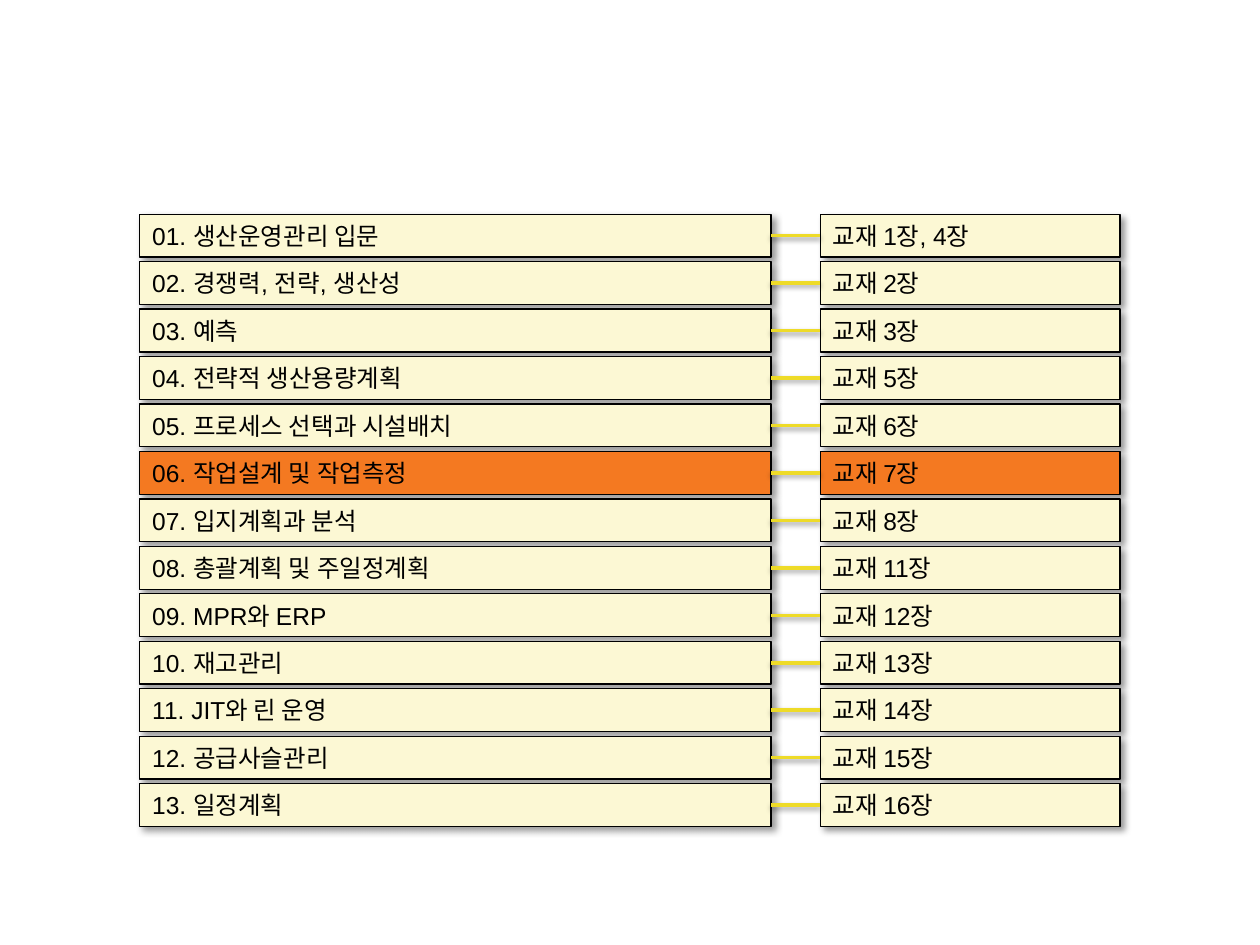
"""Build a course outline slide that links each lecture to its textbook chapters."""
import pptx
import pptx.dml.color
import pptx.enum.shapes
import pptx.enum.text
import pptx.oxml
import pptx.oxml.ns
import pptx.util

Inches = pptx.util.Inches
RGBColor = pptx.dml.color.RGBColor

ROWS = [
    ("01. 생산운영관리 입문", "교재 1장, 4장"),
    ("02. 경쟁력, 전략, 생산성", "교재 2장"),
    ("03. 예측", "교재 3장"),
    ("04. 전략적 생산용량계획", "교재 5장"),
    ("05. 프로세스 선택과 시설배치", "교재 6장"),
    ("06. 작업설계 및 작업측정", "교재 7장"),
    ("07. 입지계획과 분석", "교재 8장"),
    ("08. 총괄계획 및 주일정계획", "교재 11장"),
    ("09. MPR와 ERP", "교재 12장"),
    ("10. 재고관리", "교재 13장"),
    ("11. JIT와 린 운영", "교재 14장"),
    ("12. 공급사슬관리", "교재 15장"),
    ("13. 일정계획", "교재 16장"),
]
ACTIVE = 5
COLUMNS = [(1.11, 5.01), (6.51, 2.38)]
TOP, BOTTOM, HEIGHT = 1.7, 6.22, 0.34
STEP = (BOTTOM - TOP) / (len(ROWS) - 1)

BLACK = RGBColor(0x00, 0x00, 0x00)
CREAM = RGBColor(0xFC, 0xF8, 0xD4)
ORANGE = RGBColor(0xF4, 0x79, 0x21)
YELLOW = RGBColor(0xEE, 0xDB, 0x28)


def shade(shape, blur, dist, angle, alpha):
    """Give a shape or connector a soft black outer shadow."""
    effect = pptx.oxml.parse_xml(
        f'<a:effectLst {pptx.oxml.ns.nsdecls("a")}>'
        f'<a:outerShdw blurRad="{pptx.util.Pt(blur)}" dist="{pptx.util.Pt(dist)}" '
        f'dir="{angle * 60000}" algn="tl" rotWithShape="0">'
        f'<a:srgbClr val="{BLACK}"><a:alpha val="{alpha * 1000}"/></a:srgbClr>'
        '</a:outerShdw></a:effectLst>'
    )
    shape._element.spPr.append(effect)


def write(shape, text, size=14, font="Arial", color=BLACK,
          align=pptx.enum.text.PP_ALIGN.LEFT):
    """Put formatted text into a shape."""
    frame = shape.text_frame
    frame.word_wrap = True
    frame.auto_size = pptx.enum.text.MSO_AUTO_SIZE.SHAPE_TO_FIT_TEXT
    para = frame.paragraphs[0]
    para.alignment = align
    run = para.add_run()
    run.text = text
    run.font.size = pptx.util.Pt(size)
    run.font.name = font
    run.font.color.rgb = color


def add_box(slide, text, left, top, width, fill):
    """Add one outlined, shadowed box."""
    box = slide.shapes.add_shape(
        pptx.enum.shapes.MSO_SHAPE.RECTANGLE,
        Inches(left), Inches(top), Inches(width), Inches(HEIGHT))
    box.fill.solid()
    box.fill.fore_color.rgb = fill
    box.line.color.rgb = BLACK
    box.line.width = pptx.util.Pt(0.75)
    shade(box, blur=4, dist=3, angle=45, alpha=40)
    write(box, text)
    return box


def add_link(slide, start, end):
    """Join the right side of one box to the left side of another."""
    link = slide.shapes.add_connector(
        pptx.enum.shapes.MSO_CONNECTOR.STRAIGHT, 0, 0, 0, 0)
    link.begin_connect(start, 3)
    link.end_connect(end, 1)
    link.line.color.rgb = YELLOW
    link.line.width = pptx.util.Pt(2)
    shade(link, blur=3.1, dist=1.6, angle=90, alpha=38)


def main():
    """Lay out both columns, then join them row by row."""
    deck = pptx.Presentation()
    deck.slide_width, deck.slide_height = Inches(10), Inches(7.5)
    slide = deck.slides.add_slide(deck.slide_layouts[6])
    topics, books = [
        [add_box(slide, row[col], left, TOP + num * STEP, width,
                 ORANGE if num == ACTIVE else CREAM)
         for num, row in enumerate(ROWS)]
        for col, (left, width) in enumerate(COLUMNS)
    ]
    for topic, book in zip(topics, books):
        add_link(slide, topic, book)
    deck.save("out.pptx")


if __name__ == "__main__":
    main()
